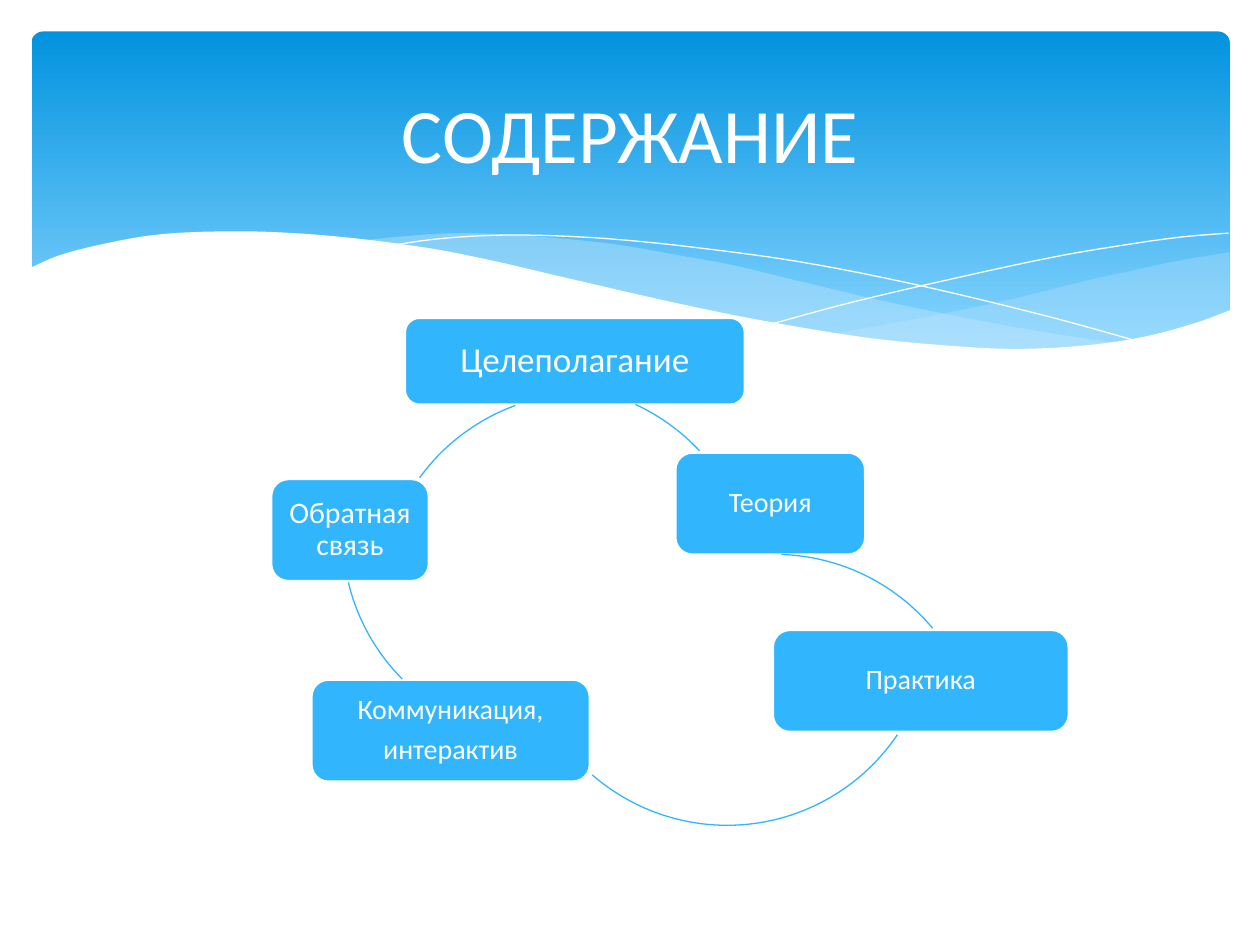
import itertools
from dataclasses import dataclass
from typing import Optional

import lxml.etree
import pptx
import pptx.dml.color
import pptx.enum.shapes
import pptx.enum.text
import pptx.oxml.ns
import pptx.util

Pt = pptx.util.Pt
SHAPE = pptx.enum.shapes.MSO_SHAPE
Knots = list[tuple[float, float]]


@dataclass(frozen=True)
class Theme:
    font: str = "Calibri"
    title_size: float = 44
    white: str = "FFFFFF"
    accent: str = "31B6FD"
    banner_top: str = "0293E0"
    banner_bottom: str = "83D3FE"
    swell: str = "C6E7FC"


@dataclass(frozen=True)
class Stage:
    lines: tuple[str, ...]
    left: float
    top: float
    width: float
    height: float = 58.2
    size: float = 16


@dataclass(frozen=True)
class Arc:
    center_x: float
    center_y: float
    start: float  # degrees, clockwise from the right
    end: float


THEME = Theme()
ARC_RADIUS = 117.4

STAGES = [
    Stage(("Целеполагание",), 231.4, 181.7, 194.2, 49.5, 20),
    Stage(("Теория",), 386, 258.7, 108.4),
    Stage(("Практика",), 441.7, 360, 169),
    Stage(("Коммуникация,", "интерактив"), 178, 388.4, 159),
    Stage(("Обратная связь",), 155, 273.8, 90, size=17),
]
ARCS = [
    Arc(313.9, 337.7, 294.8, 317),
    Arc(442.8, 434.2, 271.8, 320.2),
    Arc(415.5, 354.2, 34, 131),
    Arc(313.2, 305.3, 135.2, 166.5),
    Arc(334.8, 342, 216, 249.9),
]

# Knots of the banner waves, left to right
RIGHT_TOP = [(476, 190.8), (508.3, 185), (542.2, 178.6), (579.6, 170.6), (620, 160.6),
             (652.3, 153.4), (673.2, 149), (702.7, 144)]
RIGHT_BOTTOM = [(476, 190.8), (536.4, 198), (578, 200.2), (615, 198.7), (640, 195.8),
                (663, 190.8), (683.3, 185), (702.7, 177.8)]
LEFT_TOP = [(206, 137.5), (236, 134.6), (260, 133.2), (287.3, 133.9), (318.2, 136.1),
            (352, 139.7), (389.5, 146.2), (420.5, 151.9), (453, 159.8), (508.3, 172.8),
            (558, 182.9), (602.6, 190.8), (643, 196.6)]
LEFT_BOTTOM = [(206, 137.5), (232.6, 141.1), (260.6, 146.2), (290.9, 151.9), (323.3, 159.8),
               (353.5, 167), (420.5, 181.4), (468, 190), (510.5, 195.8), (548, 199.4),
               (581, 200.2), (610.6, 199.4), (643, 196.6)]
FALLING_LINE = [(222.5, 140.4), (247.7, 136.8), (278.6, 134.6), (311.8, 134.6), (352, 136.8),
                (400.3, 141.8), (458, 149.8), (523.4, 162.7), (598.3, 180.7), (653, 195.8)]
RISING_LINE = [(441.4, 185), (483.8, 173.5), (538.6, 160.6), (602, 146.9), (644.4, 139.7),
               (675.4, 135.4), (702, 133.2)]
WHITE_EDGE = [(16.6, 153.4), (33.1, 146.2), (54.7, 140.4), (85.7, 134.6), (115.9, 132.5),
              (152, 132.5), (195, 135.4), (244.8, 141.8), (281.5, 149), (321.8, 158.4),
              (381, 172), (434, 182.9), (495.4, 193), (548, 198), (582.5, 199.4),
              (621.4, 197.3), (655, 192.2), (684, 184.3), (703.4, 177.1)]
WHITE_BASE = [(16.6, 236.9), (703.4, 236.9)]


def rgb(value: str) -> pptx.dml.color.RGBColor:
    return pptx.dml.color.RGBColor.from_string(value)


def smooth(knots: Knots, steps: int = 6) -> Knots:
    """Cubic curve through the knots, as closely spaced points."""
    last = len(knots) - 1
    slopes = []
    for i in range(last + 1):
        (x0, y0), (x1, y1) = knots[max(i - 1, 0)], knots[min(i + 1, last)]
        slopes.append((y1 - y0) / (x1 - x0))
    points = [knots[0]]
    for i, ((x0, y0), (x1, y1)) in enumerate(itertools.pairwise(knots)):
        span = x1 - x0
        for step in range(1, steps + 1):
            t = step / steps
            rise = t * t * (3 - 2 * t)
            bend = t * (1 - t) * ((1 - t) * slopes[i] - t * slopes[i + 1])
            points.append((x0 + t * span, y0 + rise * (y1 - y0) + bend * span))
    return points


def add_wave(page, points: Knots, closed: bool):
    corners = [(Pt(x), Pt(y)) for x, y in points]
    builder = page.shapes.build_freeform(*corners[0])
    builder.add_line_segments(corners[1:], close=closed)
    wave = builder.convert_to_shape()
    wave.shadow.inherit = False
    return wave


def add_area(page, top: Knots, bottom: Knots, color: str, opacity: Optional[int] = None) -> None:
    area = add_wave(page, top + bottom[::-1], True)
    area.fill.solid()
    area.fill.fore_color.rgb = rgb(color)
    area.line.fill.background()
    if opacity is not None:
        tag = pptx.oxml.ns.qn("a:srgbClr")
        node = next(area.element.spPr.iter(tag))
        lxml.etree.SubElement(node, pptx.oxml.ns.qn("a:alpha"), val=str(opacity * 1000))


def add_hairline(page, knots: Knots) -> None:
    line = add_wave(page, smooth(knots), False)
    line.fill.background()
    line.line.color.rgb = rgb(THEME.white)
    line.line.width = Pt(0)


def add_banner(page) -> None:
    banner = page.shapes.add_shape(SHAPE.ROUNDED_RECTANGLE, Pt(18), Pt(18), Pt(684.7), Pt(194.4))
    banner.adjustments[0] = 0.034
    banner.shadow.inherit = False
    banner.line.fill.background()
    banner.fill.gradient()
    banner.fill.gradient_angle = 270
    stops = ((0, THEME.banner_top), (0.9, THEME.banner_bottom))
    for stop, (position, color) in zip(banner.fill.gradient_stops, stops):
        stop.position = position
        stop.color.rgb = rgb(color)
    add_area(page, smooth(RIGHT_TOP), smooth(RIGHT_BOTTOM), THEME.swell, 29)
    add_area(page, smooth(LEFT_TOP), smooth(LEFT_BOTTOM), THEME.swell, 40)
    add_hairline(page, FALLING_LINE)
    add_hairline(page, RISING_LINE)
    add_area(page, smooth(WHITE_EDGE), WHITE_BASE, THEME.white)


def add_run(para, text: str, size: float) -> None:
    para.alignment = pptx.enum.text.PP_ALIGN.CENTER
    span = para.add_run()
    span.text = text
    span.font.name = THEME.font
    span.font.size = Pt(size)
    span.font.color.rgb = rgb(THEME.white)


def add_stage(page, stage: Stage) -> None:
    box = page.shapes.add_shape(SHAPE.ROUNDED_RECTANGLE, Pt(stage.left), Pt(stage.top),
                                Pt(stage.width), Pt(stage.height))
    box.shadow.inherit = False
    box.fill.solid()
    box.fill.fore_color.rgb = rgb(THEME.accent)
    box.line.color.rgb = rgb(THEME.white)
    box.line.width = Pt(1.25)
    frame = box.text_frame
    frame.word_wrap = True
    frame.vertical_anchor = pptx.enum.text.MSO_ANCHOR.MIDDLE
    frame.margin_left = frame.margin_right = frame.margin_top = frame.margin_bottom = Pt(5)
    for index, line in enumerate(stage.lines):
        para = frame.add_paragraph() if index else frame.paragraphs[0]
        para.line_spacing = 0.9
        para.space_before = Pt(0.35 * stage.size if index else 0)
        add_run(para, line, stage.size)


def add_arc(page, arc: Arc) -> None:
    curve = page.shapes.add_shape(SHAPE.ARC, Pt(arc.center_x - ARC_RADIUS),
                                  Pt(arc.center_y - ARC_RADIUS),
                                  Pt(2 * ARC_RADIUS), Pt(2 * ARC_RADIUS))
    # One degree is 60000 units, one adjustment step is 100000
    curve.adjustments[0], curve.adjustments[1] = arc.start * 0.6, arc.end * 0.6
    curve.shadow.inherit = False
    curve.fill.background()
    curve.line.color.rgb = rgb(THEME.accent)
    curve.line.width = Pt(0.75)


def add_title(page, text: str) -> None:
    title = page.shapes.title
    title.left, title.top, title.width, title.height = Pt(36), Pt(26.6), Pt(648), Pt(98.6)
    title.text_frame.vertical_anchor = pptx.enum.text.MSO_ANCHOR.MIDDLE
    add_run(title.text_frame.paragraphs[0], text, THEME.title_size)
    title.element.getparent().append(title.element)  # in front of the banner


def main() -> None:
    deck = pptx.Presentation()
    deck.slide_width, deck.slide_height = Pt(720), Pt(540)
    page = deck.slides.add_slide(deck.slide_layouts.get_by_name("Title Only"))
    add_banner(page)
    # Cycle of stages, each followed by its arc
    for stage, arc in zip(STAGES, ARCS):
        add_stage(page, stage)
        add_arc(page, arc)
    add_title(page, "СОДЕРЖАНИЕ")
    deck.save("out.pptx")


if __name__ == "__main__":
    main()
